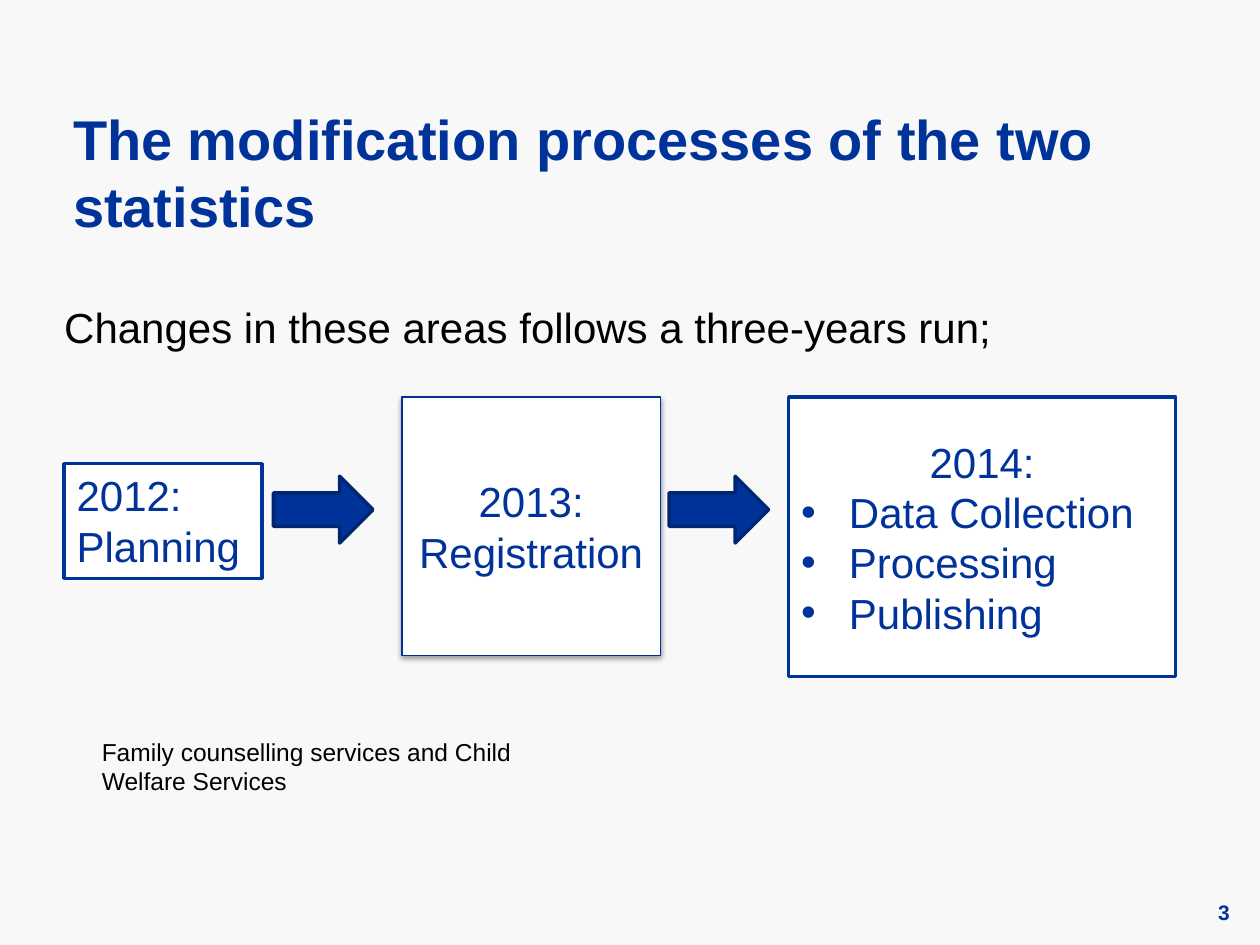
from dataclasses import dataclass

from lxml.etree import SubElement
from pptx import Presentation
from pptx.dml.color import RGBColor as RGB
from pptx.enum.shapes import MSO_SHAPE as Shape
from pptx.enum.text import MSO_ANCHOR as Anchor, PP_ALIGN as Align
from pptx.oxml.ns import qn
from pptx.util import Inches, Pt


@dataclass(frozen=True)
class Theme:
    font: str = "Arial"
    background: RGB = RGB(0xF8, 0xF8, 0xF8)
    blue: RGB = RGB(0x00, 0x33, 0x99)
    card_line: RGB = RGB(0x00, 0x32, 0x96)
    arrow_line: RGB = RGB(0x00, 0x26, 0x71)
    white: RGB = RGB(0xFF, 0xFF, 0xFF)
    black: RGB = RGB(0x00, 0x00, 0x00)
    title: Pt = Pt(32)
    body: Pt = Pt(24)
    note: Pt = Pt(14)
    number: Pt = Pt(12)
    thick: Pt = Pt(2)
    thin: Pt = Pt(0.75)


class SlideBuilder:
    def __init__(self, presentation, theme):
        self.theme = theme
        self.slide = presentation.slides.add_slide(presentation.slide_layouts[6])
        fill = self.slide.background.fill
        fill.solid()
        fill.fore_color.rgb = theme.background

    def fill_text(self, shape, lines, size, color, bold=False, align=Align.LEFT,
                  anchor=Anchor.TOP, inset=(0.1, 0.05), bullets=()):
        frame = shape.text_frame
        side, edge = (Inches(value) for value in inset)
        frame_format = {"word_wrap": True, "vertical_anchor": anchor,
                        "margin_left": side, "margin_right": side,
                        "margin_top": edge, "margin_bottom": edge}
        for name, value in frame_format.items():
            setattr(frame, name, value)
        font_format = {"name": self.theme.font, "size": size, "bold": bold}
        for index, line in enumerate([*lines, *bullets]):
            paragraph = frame.paragraphs[0] if index == 0 else frame.add_paragraph()
            paragraph.text = line
            paragraph.alignment = align
            if index >= len(lines):
                paragraph.alignment = Align.LEFT
                self.bullet(paragraph)
            for name, value in font_format.items():
                setattr(paragraph.font, name, value)
            paragraph.font.color.rgb = color

    def bullet(self, paragraph):
        properties = paragraph._p.get_or_add_pPr()
        indent = Inches(0.38)
        properties.set("marL", str(indent))
        properties.set("indent", str(-indent))
        SubElement(properties, qn("a:buFont"), typeface=self.theme.font)
        SubElement(properties, qn("a:buChar"), char="•")

    def text(self, box, line, size, color, **options):
        shape = self.slide.shapes.add_textbox(*map(Inches, box))
        self.fill_text(shape, [line], size, color, **options)

    def shape(self, kind, box, fill, line, width):
        shape = self.slide.shapes.add_shape(kind, *map(Inches, box))
        shape.shadow.inherit = False
        shape.fill.solid()
        shape.fill.fore_color.rgb = fill
        shape.line.color.rgb = line
        shape.line.width = width
        return shape

    def stage(self, box, lines, line=None, width=None, shadow=False, **options):
        theme = self.theme
        shape = self.shape(Shape.RECTANGLE, box, theme.white,
                           line or theme.blue, width or theme.thick)
        if shadow:
            self.drop_shadow(shape)
        self.fill_text(shape, lines, theme.body, theme.blue, **options)

    def drop_shadow(self, shape):
        effects = shape._element.spPr.find(qn("a:effectLst"))
        outer = SubElement(effects, qn("a:outerShdw"), blurRad=str(Pt(3.1)),
                           dist=str(Pt(1.6)), dir="5400000", rotWithShape="0")
        color = SubElement(outer, qn("a:srgbClr"), val=str(self.theme.black))
        SubElement(color, qn("a:alpha"), val="38000")

    def arrow(self, left):
        theme = self.theme
        self.shape(Shape.RIGHT_ARROW, (left, 3.78, 0.79, 0.53),
                   theme.blue, theme.arrow_line, theme.thick)


def main():
    theme = Theme()
    presentation = Presentation()
    presentation.slide_width = Inches(10)
    presentation.slide_height = Inches(7.5)
    builder = SlideBuilder(presentation, theme)

    flush = {"inset": (0, 0)}
    centred = {"align": Align.CENTER, "anchor": Anchor.MIDDLE}
    builder.text((0.58, 0.83, 9.17, 0.92),
                 "The modification processes of the two statistics",
                 theme.title, theme.blue, bold=True, **flush)
    builder.text((0.51, 2.39, 9.24, 0.4),
                 "Changes in these areas follows a three-years run;",
                 theme.body, theme.black, **flush)
    builder.text((9.25, 7.11, 0.51, 0.26), "3", theme.number, theme.blue,
                 bold=True, align=Align.RIGHT, anchor=Anchor.MIDDLE, **flush)

    builder.stage((0.51, 3.68, 1.57, 0.91), ["2012:", "Planning"])
    builder.stage((3.19, 3.15, 2.05, 2.05), ["2013: Registration"],
                  line=theme.card_line, width=theme.thin, shadow=True, **centred)
    builder.stage((6.26, 3.15, 3.07, 2.22), ["2014:"],
                  bullets=["Data Collection", "Processing", "Publishing"], **centred)
    for left in (2.17, 5.31):
        builder.arrow(left)

    builder.text((0.71, 5.8, 3.74, 0.57),
                 "Family counselling services and Child Welfare Services",
                 theme.note, theme.black)
    presentation.save("out.pptx")


if __name__ == "__main__":
    main()
